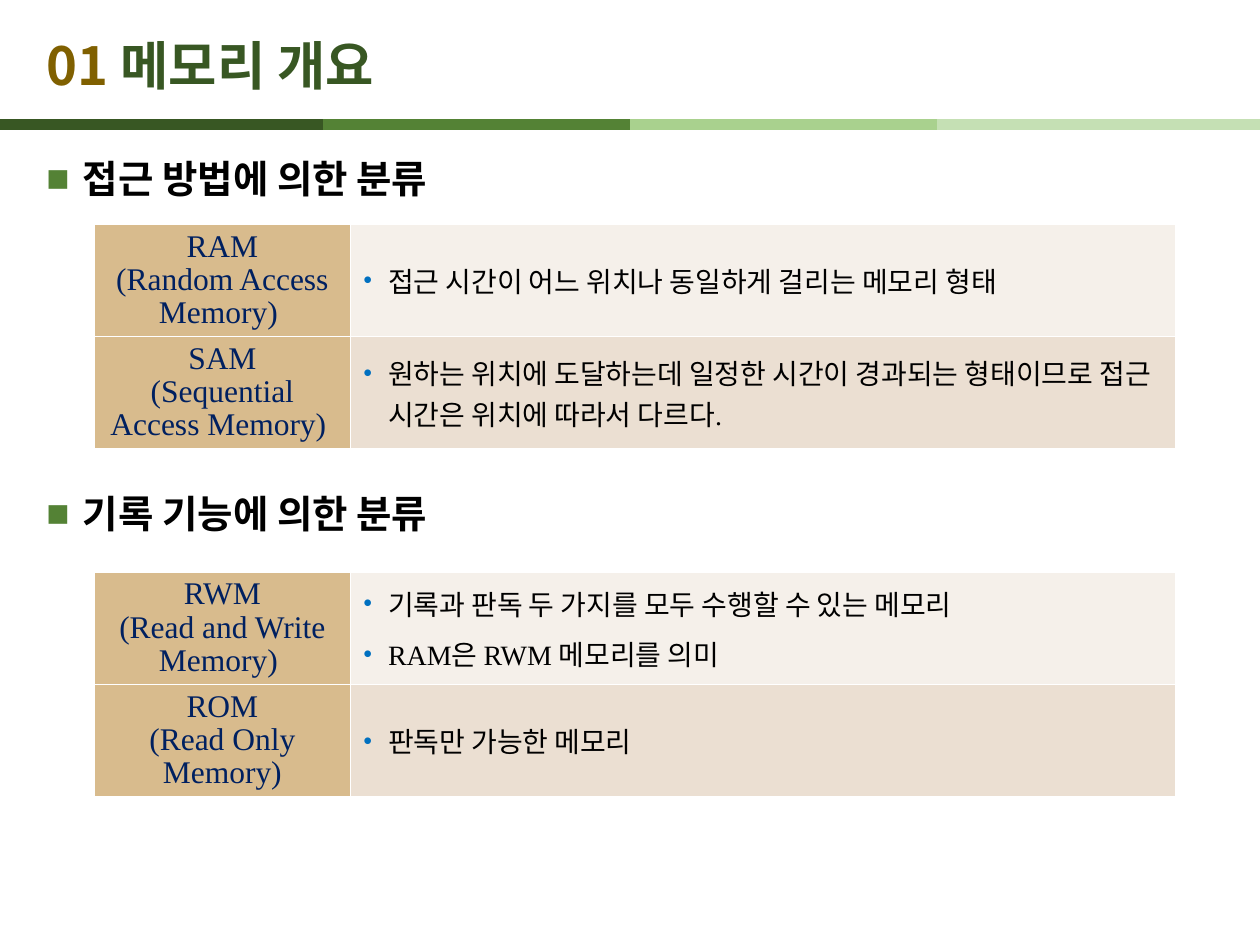
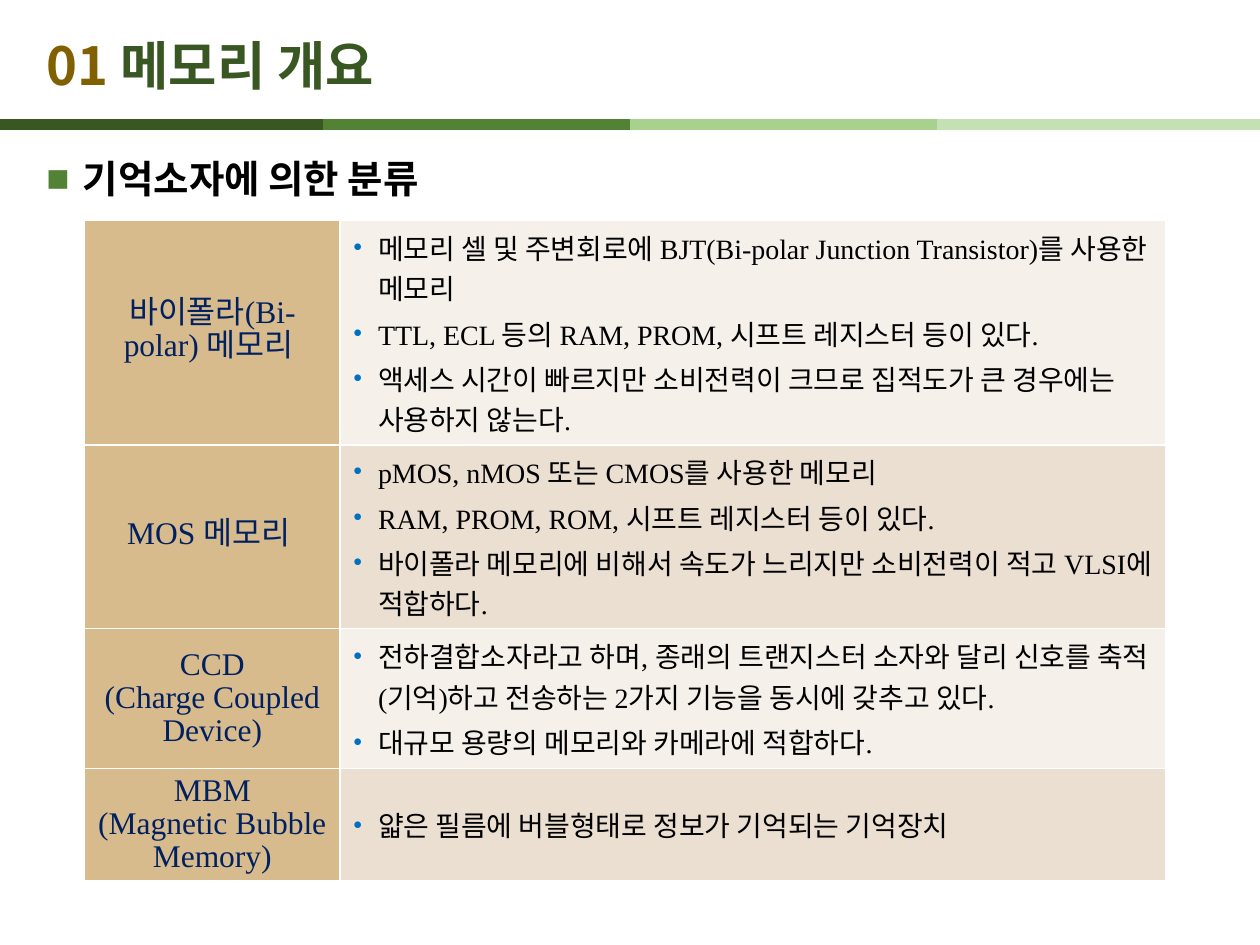
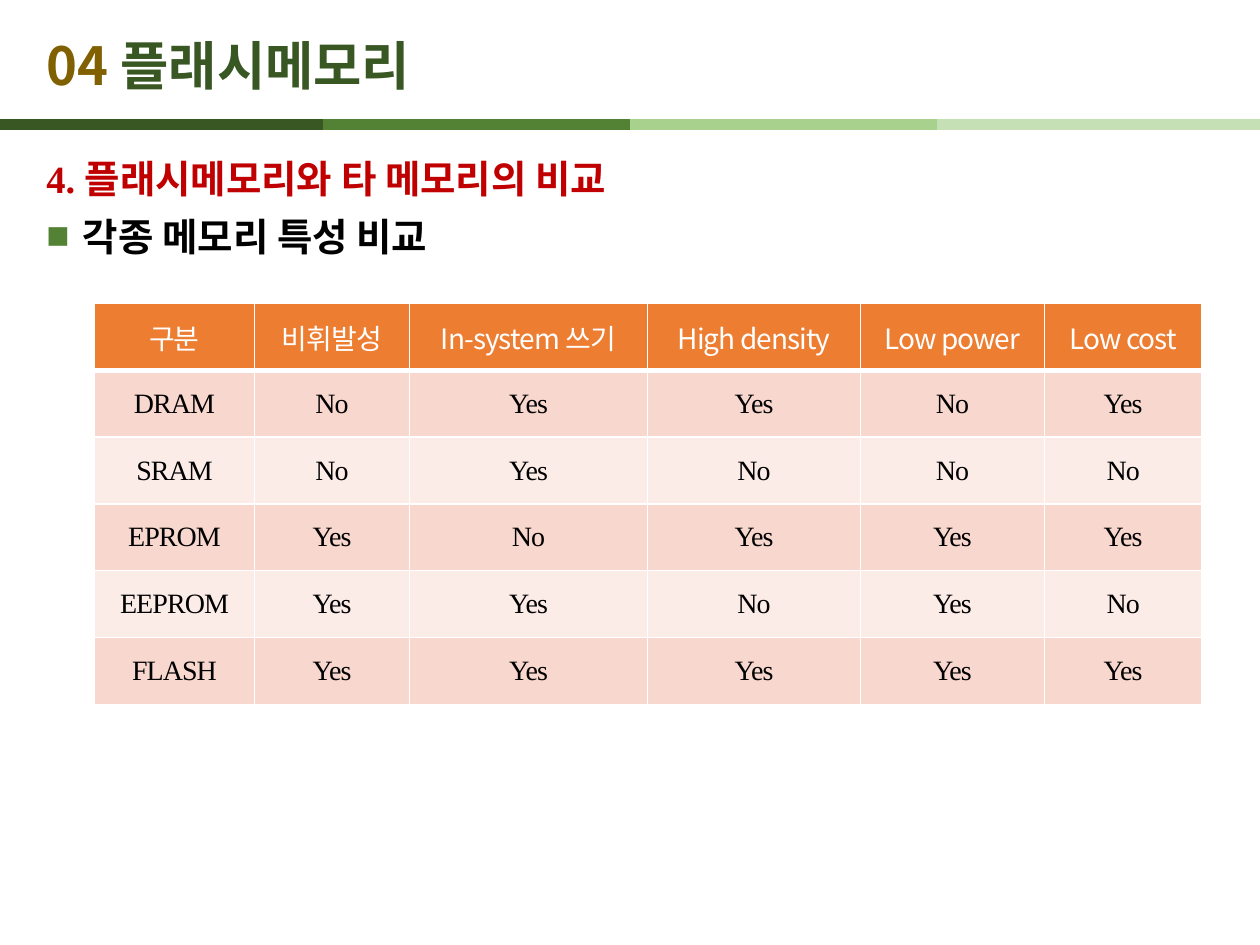
from dataclasses import dataclass

from lxml import etree
from pptx import Presentation
from pptx.dml.color import RGBColor
from pptx.enum import shapes, text
from pptx.oxml.ns import qn
from pptx.util import Inches, Pt


@dataclass(frozen=True)
class Theme:
    latin: str = "Times New Roman"
    korean: str = "Noto Sans CJK KR"
    number: str = "806000"
    title: str = "385723"
    bands: tuple = ("385723", "548235", "A9D18E", "C5E0B4")
    square: str = "548235"
    dot: str = "0070C0"
    ink: str = "000000"
    section: str = "C00000"
    term: str = "002060"
    term_fill: str = "C89F5D"
    term_opacity: int = 70
    meaning_fills: tuple = ("F5F0EA", "EBDFD2")
    header_fill: str = "ED7D31"
    grid_fills: tuple = ("F8D7CE", "FCECE8")
    white: str = "FFFFFF"
    title_size: int = 30
    heading_size: int = 22
    term_size: int = 18
    body_size: int = 16


THEME = Theme()
TITLE_BOX = (0.27, 0.21, 8.27, 0.6)
BODY_BOX = (0.27, 1.07, 9.45, 5.98)
BAND_STARTS = (0, 2.56, 5, 7.44)
BAND_LENGTH = 2.56
BAND_Y = 0.99
TERM_COLUMNS = (2.03, 6.55)


def child(parent, tag, **attributes):
    return etree.SubElement(parent, qn(tag), attributes)


def inches(box):
    return [Inches(length) for length in box]


def style(paragraph, size, color=None, bold=False, latin=THEME.latin, spacing=None):
    font = paragraph.font
    font.size, font.bold, font.name = Pt(size), bold, latin
    if color:
        font.color.rgb = RGBColor.from_string(color)
    defaults = paragraph._p.pPr.find(qn("a:defRPr"))
    child(defaults, "a:ea", typeface=THEME.korean)
    if spacing is not None:
        defaults.set("spc", str(int(spacing * 100)))


def add_bullet(paragraph, mark, color, indent):
    properties = paragraph._p.get_or_add_pPr()
    properties.set("marL", str(Inches(indent)))
    properties.set("indent", str(-Inches(indent)))
    child(child(properties, "a:buClr"), "a:srgbClr", val=color)
    child(properties, "a:buFont", typeface=THEME.latin)
    child(properties, "a:buChar", char=mark)


def fill_paragraphs(frame, lines):
    for index, line in enumerate(lines):
        paragraph = frame.add_paragraph() if index else frame.paragraphs[0]
        paragraph.text = line
        yield paragraph


def add_bands(slide):
    for start, color in zip(BAND_STARTS, THEME.bands):
        band = slide.shapes.add_connector(
            shapes.MSO_CONNECTOR.STRAIGHT,
            *inches((start, BAND_Y, start + BAND_LENGTH, BAND_Y)))
        band.line.color.rgb = RGBColor.from_string(color)
        band.line.width = Pt(6)
        child(band._element.spPr, "a:effectLst")


def add_titled_slide(deck, number, topic):
    slide = deck.slides.add_slide(deck.slide_layouts[5])
    add_bands(slide)
    title = slide.shapes.title
    title.left, title.top, title.width, title.height = inches(TITLE_BOX)
    frame = title.text_frame
    frame.auto_size = text.MSO_AUTO_SIZE.NONE
    frame.vertical_anchor = text.MSO_ANCHOR.MIDDLE
    paragraph = frame.paragraphs[0]
    paragraph.alignment = text.PP_ALIGN.LEFT
    for words, color in ((number + " ", THEME.number), (topic, THEME.title)):
        run = paragraph.add_run()
        run.text = words
        run.font.color.rgb = RGBColor.from_string(color)
    style(paragraph, THEME.title_size, bold=True, latin=THEME.korean)
    return slide


def add_headings(slide, box, headings, section=None, gap=0):
    frame = slide.shapes.add_textbox(*inches(box)).text_frame
    frame.word_wrap = True
    frame.margin_top = Inches(0.07)
    lines = ([section] if section else []) + headings
    for index, paragraph in enumerate(fill_paragraphs(frame, lines)):
        is_section = section and index == 0
        if not is_section:
            add_bullet(paragraph, "■", THEME.square, 0.29)
        paragraph.line_spacing = 1.25
        if index and gap:
            paragraph.space_before = Inches(gap)
        style(paragraph, THEME.heading_size,
              THEME.section if is_section else THEME.ink, bold=True)


def finish_cell(cell, fill, opacity=100, bottom=1):
    cell.vertical_anchor = text.MSO_ANCHOR.MIDDLE
    properties = cell._tc.get_or_add_tcPr()
    for side, width in (("L", 1), ("R", 1), ("T", 1), ("B", bottom)):
        border = child(properties, f"a:ln{side}", w=str(Pt(width)))
        child(child(border, "a:solidFill"), "a:srgbClr", val=THEME.white)
    cell.fill.solid()
    cell.fill.fore_color.rgb = RGBColor.from_string(fill)
    if opacity < 100:
        color = properties.find(qn("a:solidFill")).find(qn("a:srgbClr"))
        child(color, "a:alpha", val=str(opacity * 1000))


def add_grid(slide, left, top, columns, rows):
    table = slide.shapes.add_table(
        len(rows), len(columns),
        *inches((left, top, sum(columns), sum(rows)))).table
    table.first_row = table.horz_banding = False
    for column, width in zip(table.columns, columns):
        column.width = Inches(width)
    for row, height in zip(table.rows, rows):
        row.height = Inches(height)
    return table


def add_term_table(slide, left, top, rows, entries, space_after):
    table = add_grid(slide, left, top, TERM_COLUMNS, rows)
    for index, (term, meanings) in enumerate(entries):
        term_cell, meaning_cell = table.cell(index, 0), table.cell(index, 1)
        for paragraph in fill_paragraphs(term_cell.text_frame, term):
            paragraph.alignment = text.PP_ALIGN.CENTER
            paragraph.line_spacing = Pt(19)
            style(paragraph, THEME.term_size, THEME.term)
        for paragraph in fill_paragraphs(meaning_cell.text_frame, meanings):
            add_bullet(paragraph, "•", THEME.dot, 0.2)
            paragraph.space_after = Pt(space_after)
            style(paragraph, THEME.body_size, THEME.ink)
        finish_cell(term_cell, THEME.term_fill, THEME.term_opacity)
        finish_cell(meaning_cell, THEME.meaning_fills[index % 2])


def add_comparison_table(slide, left, top, columns, row_height, records):
    table = add_grid(slide, left, top, columns, [row_height] * len(records))
    for row, record in enumerate(records):
        header = row == 0
        for column, value in enumerate(record):
            cell = table.cell(row, column)
            cell.margin_left = cell.margin_right = Inches(0.02 if column == 2 else 0.07)
            cell.margin_top = cell.margin_bottom = 0
            cell.text = value
            paragraph = cell.text_frame.paragraphs[0]
            paragraph.alignment = text.PP_ALIGN.CENTER
            style(paragraph, THEME.body_size,
                  THEME.white if header else THEME.ink,
                  latin=THEME.korean if header else THEME.latin, spacing=-0.5)
            fill = THEME.header_fill if header else THEME.grid_fills[(row - 1) % 2]
            finish_cell(cell, fill, bottom=3 if header else 1)


def build_access_and_recording(deck):
    slide = add_titled_slide(deck, "01", "메모리 개요")
    add_headings(slide, BODY_BOX,
                 ["접근 방법에 의한 분류", "기록 기능에 의한 분류"], gap=2.2)
    access = [
        (["RAM", "(Random Access Memory) "],
         ["접근 시간이 어느 위치나 동일하게 걸리는 메모리 형태"]),
        (["SAM", "(Sequential Access Memory) "],
         ["원하는 위치에 도달하는데 일정한 시간이 경과되는 형태이므로 접근 시간은 위치에 따라서 다르다."]),
    ]
    recording = [
        (["RWM", "(Read and Write Memory) "],
         ["기록과 판독 두 가지를 모두 수행할 수 있는 메모리",
          "RAM은 RWM 메모리를 의미"]),
        (["ROM", "(Read Only Memory)"], ["판독만 가능한 메모리"]),
    ]
    for top, entries in ((1.78, access), (4.54, recording)):
        add_term_table(slide, 0.75, top, (0.89, 0.89), entries, 6)


def build_storage_elements(deck):
    slide = add_titled_slide(deck, "01", "메모리 개요")
    add_headings(slide, BODY_BOX, ["기억소자에 의한 분류"])
    elements = [
        (["바이폴라(Bi-polar) 메모리 "],
         ["메모리 셀 및 주변회로에 BJT(Bi-polar Junction Transistor)를 사용한 메모리",
          "TTL, ECL 등의 RAM, PROM, 시프트 레지스터 등이 있다.",
          "액세스 시간이 빠르지만 소비전력이 크므로 집적도가 큰 경우에는 사용하지 않는다."]),
        (["MOS 메모리 "],
         ["pMOS, nMOS 또는 CMOS를 사용한 메모리",
          "RAM, PROM, ROM, 시프트 레지스터 등이 있다.",
          "바이폴라 메모리에 비해서 속도가 느리지만 소비전력이 적고 VLSI에 적합하다."]),
        (["CCD", "(Charge Coupled Device)"],
         ["전하결합소자라고 하며, 종래의 트랜지스터 소자와 달리 신호를 축적(기억)하고 전송하는 2가지 기능을 동시에 갖추고 있다.",
          "대규모 용량의 메모리와 카메라에 적합하다."]),
        (["MBM", "(Magnetic Bubble Memory)"],
         ["얇은 필름에 버블형태로 정보가 기억되는 기억장치"]),
    ]
    add_term_table(slide, 0.67, 1.75, (1.78, 1.46, 1.11, 0.88), elements, 3)


def build_flash_comparison(deck):
    slide = add_titled_slide(deck, "04", "플래시메모리")
    add_headings(slide, BODY_BOX, ["각종 메모리 특성 비교"],
                 section="4. 플래시메모리와 타 메모리의 비교")
    records = [
        ("구분", "비휘발성", "In-system 쓰기", "High density", "Low power", "Low cost"),
        ("DRAM", "No", "Yes", "Yes", "No", "Yes"),
        ("SRAM", "No", "Yes", "No", "No", "No"),
        ("EPROM", "Yes", "No", "Yes", "Yes", "Yes"),
        ("EEPROM", "Yes", "Yes", "No", "Yes", "No"),
        ("FLASH", "Yes", "Yes", "Yes", "Yes", "Yes"),
    ]
    add_comparison_table(slide, 0.75, 2.41,
                         (1.27, 1.23, 1.89, 1.69, 1.46, 1.25), 0.53, records)


def main():
    deck = Presentation()
    deck.slide_width, deck.slide_height = Inches(10), Inches(7.5)
    build_access_and_recording(deck)
    build_storage_elements(deck)
    build_flash_comparison(deck)
    deck.save("out.pptx")


if __name__ == "__main__":
    main()
